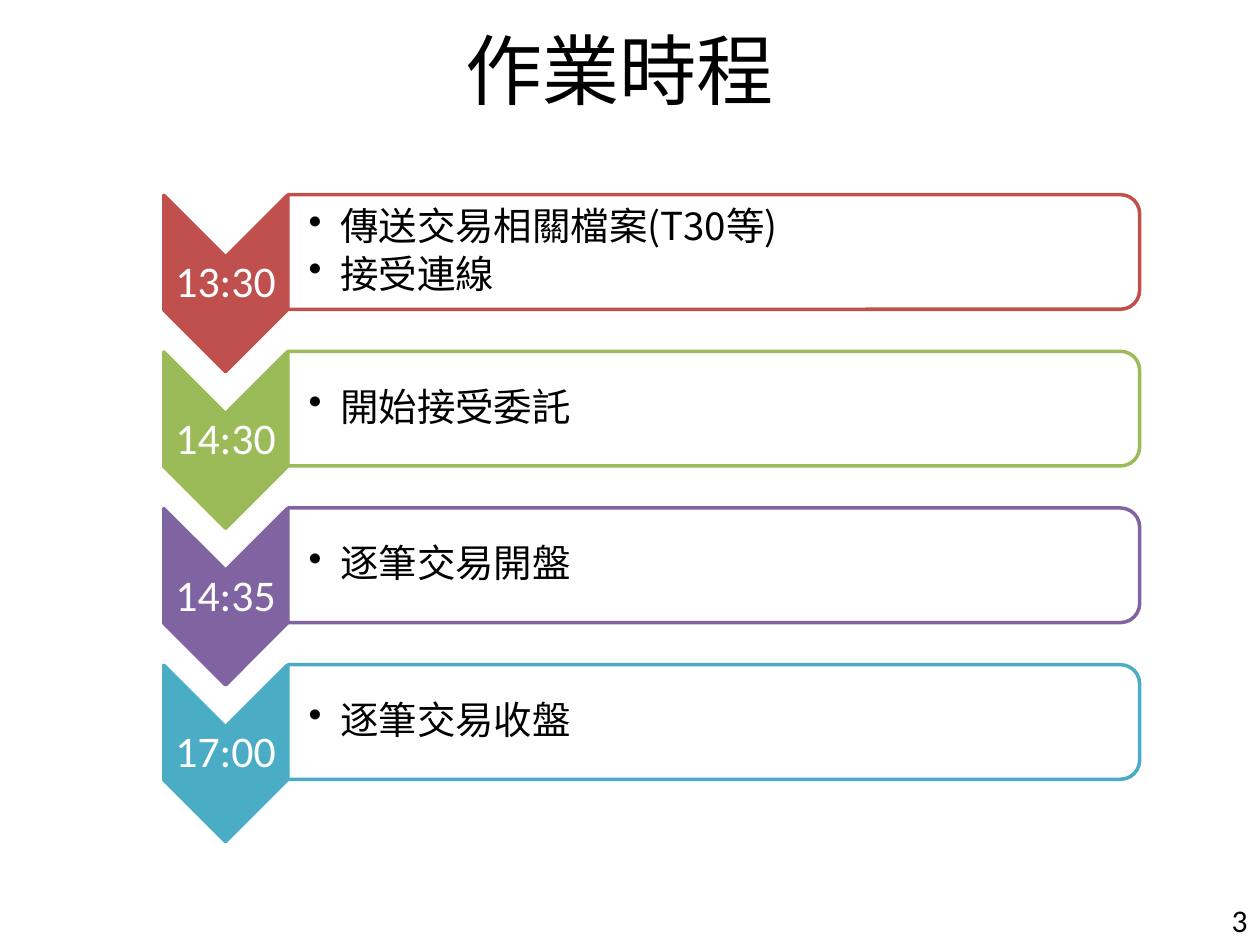
from lxml import etree
from pptx import Presentation, util as u
from pptx.dml.color import RGBColor
from pptx.enum import shapes, text
from pptx.oxml import ns

COLORS = {"red": "C0504D", "green": "9BBB59", "purple": "8064A2",
          "aqua": "4BACC6", "white": "FFFFFF", "black": "000000"}
CJK = "Noto Sans CJK SC"
ALIGN = text.PP_ALIGN

deck = Presentation()
deck.slide_width, deck.slide_height = u.Inches(10), u.Inches(7.5)
page = deck.slides.add_slide(deck.slide_layouts[6])


def add_text(place, lines, size, font, color, align, margins=None, bullet=False, **spacing):
    box = page.shapes.add_textbox(*map(u.Inches, place))
    frame = box.text_frame
    frame.word_wrap = True
    if margins:
        frame.vertical_anchor = text.MSO_ANCHOR.MIDDLE
        for side, value in margins.items():
            setattr(frame, f"margin_{side}", u.Inches(value))
    for number, line in enumerate(lines):
        para = frame.paragraphs[0] if number == 0 else frame.add_paragraph()
        for name, value in {"alignment": align, **spacing}.items():
            setattr(para, name, value)
        if bullet:
            para.level = 1
            props = para._p.get_or_add_pPr()
            props.set("marL", str(u.Inches(0.25)))
            props.set("indent", str(u.Inches(-0.25)))
            etree.SubElement(props, ns.qn("a:buChar")).set("char", "•")
        span = para.add_run()
        span.text = line
        for name, value in {"size": u.Pt(size), "name": font}.items():
            setattr(span.font, name, value)
        span.font.color.rgb = RGBColor.from_string(COLORS[color])
        east_asian = etree.SubElement(span._r.get_or_add_rPr(), ns.qn("a:ea"))
        east_asian.set("typeface", font)
    return box


def add_turned_shape(kind, place, fill, line):
    shape = page.shapes.add_shape(kind, *map(u.Inches, place))
    shape.rotation = 90
    shape.shadow.inherit = False
    shape.fill.solid()
    shape.fill.fore_color.rgb = RGBColor.from_string(COLORS[fill])
    shape.line.color.rgb = RGBColor.from_string(COLORS[line])
    shape.line.width = u.Pt(2)
    return shape


# Page number
add_text((9.46, 7.1, 0.54, 0.4), ["3"], 18, "Calibri", "black", ALIGN.RIGHT)

# Schedule: one chevron and one bullet panel per time
steps = [
    ("13:30", "red", ["傳送交易相關檔案(T30等)", "接受連線"], ALIGN.JUSTIFY),
    ("14:30", "green", ["開始接受委託"], ALIGN.LEFT),
    ("14:35", "purple", ["逐筆交易開盤"], ALIGN.LEFT),
    ("17:00", "aqua", ["逐筆交易收盤"], ALIGN.LEFT),
]
first_top, last_top = 1.76, 5.49
pitch = (last_top - first_top) / (len(steps) - 1)
tight = dict.fromkeys(("left", "top", "right", "bottom"), 0.02)

for row, (time, color, tasks, align) in enumerate(steps):
    top = first_top + row * pitch
    add_turned_shape(shapes.MSO_SHAPE.CHEVRON, (1.09, top, 1.4, 0.98), color, color)
    add_text((1.3, top + 0.28, 0.98, 0.42), [time], 25, "Calibri", "white", ALIGN.CENTER,
             tight, line_spacing=0.9, space_after=u.Pt(8.75))
    panel = add_turned_shape(shapes.MSO_SHAPE.ROUND_2_SAME_RECTANGLE,
                             (5.21, top - 3.14, 0.91, 6.76), "white", color)
    tint = panel.fill._xPr.find(ns.qn("a:solidFill"))[0]
    etree.SubElement(tint, ns.qn("a:alpha")).set("val", "90000")
    add_text((2.28, top - 0.17, 6.72, 0.82), tasks, 22, CJK, "black", align,
             {**tight, "left": 0.17}, bullet=True, line_spacing=0.9, space_after=u.Pt(3.3))

# Title
title = add_text((0.98, 0.13, 7.87, 0.84), ["作業時程"], 44, CJK, "black", ALIGN.CENTER)
title.text_frame.auto_size = text.MSO_AUTO_SIZE.SHAPE_TO_FIT_TEXT

deck.save("out.pptx")
